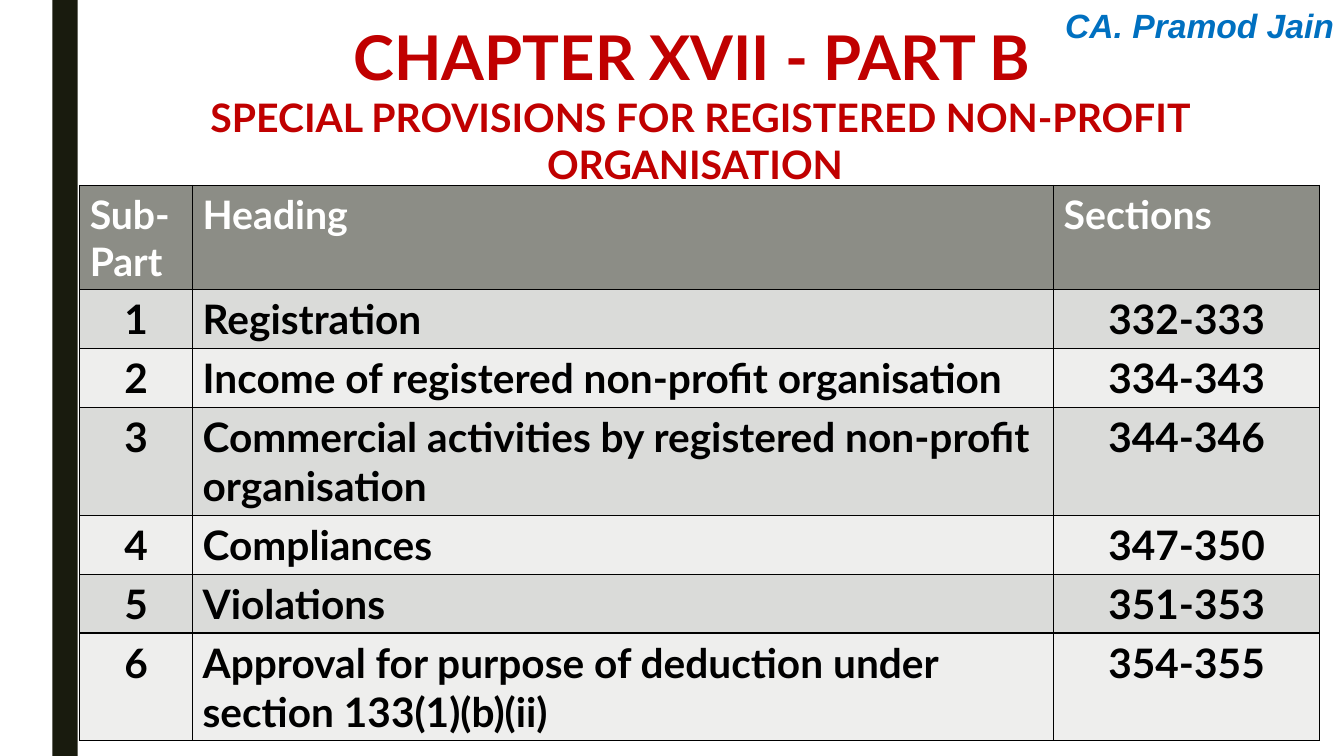
from pptx import Presentation
from pptx.dml.color import RGBColor
from pptx.enum.shapes import MSO_SHAPE as SHAPE
from pptx.enum.text import MSO_ANCHOR as ANCHOR, MSO_AUTO_SIZE as AUTO, PP_ALIGN as ALIGN
from pptx.oxml import parse_xml
from pptx.oxml.ns import nsdecls
from pptx.util import Inches, Pt

RED, BLUE, BLACK, WHITE = "C00000", "0070C0", "000000", "FFFFFF"
BAR, HEADER, BANDS = "191B0E", "8C8D86", ("DADBD9", "EEEEED")
COLUMN_WIDTHS = (1.12, 8.54, 2.64)
ONE_LINE, TWO_LINES = 0.58, 1.07
ROWS = [
    (1.03, "Sub-Part", "Heading", "Sections"),
    (ONE_LINE, "1", "Registration", "332-333"),
    (ONE_LINE, "2", "Income of registered non-profit organisation", "334-343"),
    (TWO_LINES, "3", "Commercial activities by registered non-profit organisation", "344-346"),
    (ONE_LINE, "4", "Compliances", "347-350"),
    (ONE_LINE, "5", "Violations", "351-353"),
    (TWO_LINES, "6", "Approval for purpose of deduction under section 133(1)(b)(ii)", "354-355"),
]


def color(hex_code):
    return RGBColor.from_string(hex_code)


def write(p, text, size, fill, font="Lato", align=ALIGN.LEFT, italic=False):
    """Put one bold run into a paragraph."""
    p.alignment = align
    p.line_spacing = 1.0
    p.space_before = Pt(0)
    r = p.add_run()
    r.text = text
    r.font.name, r.font.size = font, Pt(size)
    r.font.bold, r.font.italic = True, italic
    r.font.color.rgb = color(fill)


def add_borders(cell, hex_code=BLACK, width=1):
    tc_pr = cell._tc.get_or_add_tcPr()
    for side in ("lnL", "lnR", "lnT", "lnB"):
        tc_pr.append(parse_xml(
            f'<a:{side} {nsdecls("a")} w="{Pt(width)}"><a:solidFill>'
            f'<a:srgbClr val="{hex_code}"/></a:solidFill></a:{side}>'))


class Deck:
    def __init__(self):
        self.prs = Presentation()
        self.prs.slide_width, self.prs.slide_height = Inches(13.33), Inches(7.5)
        self.s = self.prs.slides.add_slide(self.prs.slide_layouts[5])

    def bar(self, x, y, w, h, fill):
        sp = self.s.shapes.add_shape(SHAPE.RECTANGLE, Inches(x), Inches(y), Inches(w), Inches(h))
        sp.shadow.inherit = False
        sp.fill.solid()
        sp.fill.fore_color.rgb = color(fill)
        sp.line.fill.background()

    def title(self, x, y, w, h, lines):
        sp = self.s.shapes.title
        sp.left, sp.top, sp.width, sp.height = Inches(x), Inches(y), Inches(w), Inches(h)
        tf = sp.text_frame
        tf.word_wrap, tf.auto_size, tf.vertical_anchor = True, AUTO.NONE, ANCHOR.MIDDLE
        for i, (text, size) in enumerate(lines):
            p = tf.add_paragraph() if i else tf.paragraphs[0]
            write(p, text, size, RED, align=ALIGN.CENTER)

    def text(self, x, y, w, h, text, size, fill, **style):
        tf = self.s.shapes.add_textbox(Inches(x), Inches(y), Inches(w), Inches(h)).text_frame
        tf.word_wrap = True
        write(tf.paragraphs[0], text, size, fill, **style)

    def table(self, x, y, widths, rows):
        """Each row is its height followed by its cell texts; the first is the header."""
        heights = [row[0] for row in rows]
        table = self.s.shapes.add_table(len(rows), len(widths), Inches(x), Inches(y),
                                        Inches(sum(widths)), Inches(sum(heights))).table
        for column, width in zip(table.columns, widths):
            column.width = Inches(width)
        for i, (height, *texts) in enumerate(rows):
            table.rows[i].height = Inches(height)
            for j, text in enumerate(texts):
                cell = table.cell(i, j)
                add_borders(cell)
                cell.fill.solid()
                cell.fill.fore_color.rgb = color(BANDS[(i - 1) % 2] if i else HEADER)
                p = cell.text_frame.paragraphs[0]
                if i == 0:
                    write(p, text, 28, WHITE)
                else:
                    write(p, text, 29, BLACK, align=ALIGN.LEFT if j == 1 else ALIGN.CENTER)


def main():
    deck = Deck()
    deck.bar(0.52, 0, 0.25, 7.5, BAR)
    deck.title(0.79, 0.68, 12.3, 0.69, [
        ("CHAPTER XVII - PART B ", 44),
        ("SPECIAL PROVISIONS FOR REGISTERED NON-PROFIT ORGANISATION ", 28),
    ])
    deck.text(10.16, 0, 3.17, 0.42, "CA. Pramod Jain", 24, BLUE,
              font="Arial", align=ALIGN.RIGHT, italic=True)
    deck.table(0.79, 1.84, COLUMN_WIDTHS, ROWS)
    deck.prs.save("out.pptx")


if __name__ == "__main__":
    main()
